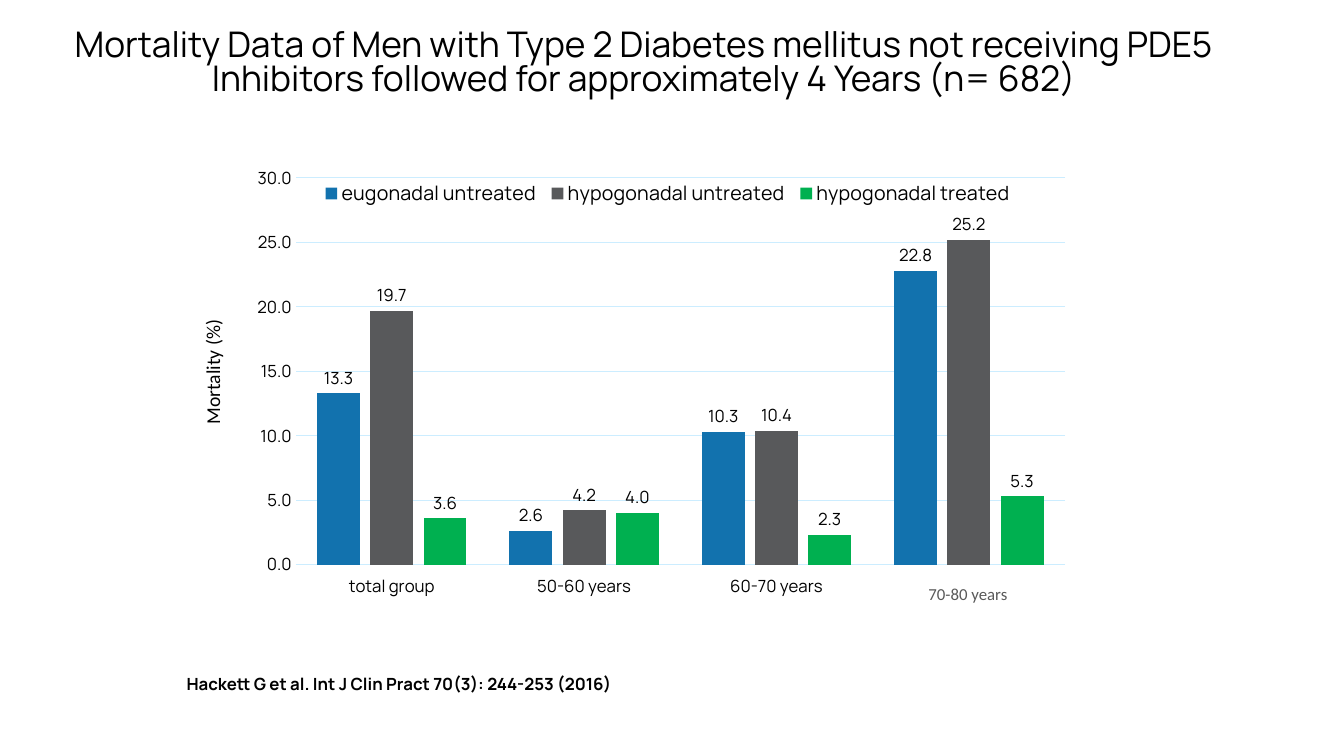
from dataclasses import dataclass

from lxml import etree
from pptx import Presentation
from pptx.chart.data import CategoryChartData
from pptx.dml.color import RGBColor
from pptx.enum.chart import (
    XL_CHART_TYPE,
    XL_LABEL_POSITION,
    XL_LEGEND_POSITION,
    XL_TICK_LABEL_POSITION,
    XL_TICK_MARK,
)
from pptx.enum.text import MSO_ANCHOR, MSO_AUTO_SIZE, PP_ALIGN
from pptx.oxml.ns import qn
from pptx.util import Inches, Pt

COLUMNS = XL_CHART_TYPE.COLUMN_CLUSTERED
ABOVE_BAR = XL_LABEL_POSITION.OUTSIDE_END
BOTTOM = XL_LEGEND_POSITION.BOTTOM
LOW = XL_TICK_LABEL_POSITION.LOW
NO_TICK = XL_TICK_MARK.NONE
MIDDLE = MSO_ANCHOR.MIDDLE
GROW = MSO_AUTO_SIZE.SHAPE_TO_FIT_TEXT
NO_FIT = MSO_AUTO_SIZE.NONE
CENTER = PP_ALIGN.CENTER
LEFT = PP_ALIGN.LEFT

WIDTH, HEIGHT = Inches(13.33), Inches(7.5)
MAIN_FONT, SIDE_FONT = "Manrope", "Calibri"
BLACK, GRID_BLUE = "000000", "CCEDFF"
ONE_DECIMAL = "0.0"
AGE_GROUPS = ("total group", "50-60 years", "60-70 years", "")


@dataclass(frozen=True)
class Area:
    left: float
    top: float
    width: float
    height: float

    def on_slide(self) -> tuple[int, int, int, int]:
        return (
            round(WIDTH * self.left / 100),
            round(HEIGHT * self.top / 100),
            round(WIDTH * self.width / 100),
            round(HEIGHT * self.height / 100),
        )


@dataclass(frozen=True)
class Cohort:
    name: str
    mortality: tuple[float, ...]
    color: str


@dataclass(frozen=True)
class Caption:
    text: str
    area: Area
    size: float = 12
    font: str = MAIN_FONT
    color: str = BLACK
    bold: bool = False
    align: PP_ALIGN = CENTER
    wrap: bool = False
    rotation: float = 0


COHORTS = (
    Cohort("eugonadal untreated", (13.3, 2.6, 10.3, 22.8), "1272AE"),
    Cohort("hypogonadal untreated", (19.7, 4.2, 10.4, 25.2), "58595B"),
    Cohort("hypogonadal treated", (3.6, 4.0, 2.3, 5.3), "00B050"),
)

CAPTIONS = (
    Caption("70-80 years", Area(68.27, 76.53, 7.5, 4), font=SIDE_FONT, color="595959"),
    Caption(
        "Hackett G et al. Int J Clin Pract 70(3): 244-253 (2016)",
        Area(12.75, 88.4, 33.91, 4),
        bold=True,
    ),
    Caption(
        "Mortality (%)",
        Area(10.58, 45.87, 10.5, 4.53),
        size=14,
        font=SIDE_FONT,
        align=LEFT,
        wrap=True,
        rotation=270,
    ),
)


def rgb(color: str) -> RGBColor:
    return RGBColor.from_string(color)


def style_font(font, size: float, name: str = MAIN_FONT, color: str = BLACK, bold: bool = False) -> None:
    font.size = Pt(size)
    font.name = name
    font.bold = bold
    font.color.rgb = rgb(color)


def write_text(frame, text: str, *, size: float, font: str = MAIN_FONT, color: str = BLACK,
               bold: bool = False, align: PP_ALIGN = CENTER, spacing: float = 1.0) -> None:
    paragraph = frame.paragraphs[0]
    paragraph.alignment = align
    paragraph.line_spacing = spacing
    run = paragraph.add_run()
    run.text = text
    style_font(run.font, size, font, color, bold)


def add_caption(slide, caption: Caption) -> None:
    box = slide.shapes.add_textbox(*caption.area.on_slide())
    box.rotation = caption.rotation
    frame = box.text_frame
    frame.word_wrap = caption.wrap
    frame.auto_size = GROW
    write_text(frame, caption.text, size=caption.size, font=caption.font,
               color=caption.color, bold=caption.bold, align=caption.align)


def place_in_chart(parent, index: int, area: Area, inner: bool = False) -> None:
    for old in parent.findall(qn("c:layout")):
        parent.remove(old)
    layout = etree.Element(qn("c:layout"))
    manual = etree.SubElement(layout, qn("c:manualLayout"))
    settings = [("layoutTarget", "inner")] if inner else []
    settings += [("xMode", "edge"), ("yMode", "edge")]
    settings += [("x", area.left / 100), ("y", area.top / 100),
                 ("w", area.width / 100), ("h", area.height / 100)]
    for tag, setting in settings:
        etree.SubElement(manual, qn(f"c:{tag}")).set("val", str(setting))
    parent.insert(index, layout)


def style_axes(chart) -> None:
    ages, mortality = chart.category_axis, chart.value_axis
    for axis in (ages, mortality):
        axis.major_tick_mark = NO_TICK
        axis.minor_tick_mark = NO_TICK
        style_font(axis.tick_labels.font, 12)
    ages.tick_label_position = LOW
    ages.format.line.color.rgb = rgb(GRID_BLUE)
    ages.format.line.width = Pt(1)
    mortality.minimum_scale, mortality.maximum_scale = 0, 30
    mortality.major_unit = 5
    mortality.format.line.fill.background()
    mortality.tick_labels.number_format = ONE_DECIMAL
    mortality.tick_labels.number_format_is_linked = False
    gridline = mortality.major_gridlines.format.line
    gridline.color.rgb = rgb(GRID_BLUE)
    gridline.width = Pt(0.75)


def add_mortality_chart(slide) -> None:
    figures = CategoryChartData(number_format=ONE_DECIMAL)
    figures.categories = AGE_GROUPS
    for cohort in COHORTS:
        figures.add_series(cohort.name, cohort.mortality)
    area = Area(17.93, 20.8, 62.57, 65.33)
    chart = slide.shapes.add_chart(COLUMNS, *area.on_slide(), figures).chart
    chart.has_title = False
    style_font(chart.font, 10, color="006EAB")
    style_axes(chart)

    plot = chart.plots[0]
    plot.vary_by_categories = False
    plot.gap_width, plot.overlap = 100, -24
    for series, cohort in zip(plot.series, COHORTS):
        series.format.fill.solid()
        series.format.fill.fore_color.rgb = rgb(cohort.color)
        labels = series.data_labels
        labels.show_value = True
        labels.position = ABOVE_BAR
        labels.number_format = ONE_DECIMAL
        labels.number_format_is_linked = False
        style_font(labels.font, 12)

    chart.has_legend = True
    legend = chart.legend
    legend.position = BOTTOM
    legend.include_in_layout = False
    style_font(legend.font, 14)
    legend_xml = chart.element.find(f".//{qn('c:legend')}")
    plot_xml = chart.element.find(f".//{qn('c:plotArea')}")
    place_in_chart(legend_xml, 1, Area(9, 4.6, 83.5, 5.4))
    place_in_chart(plot_xml, 0, Area(6.5, 4.2, 91.5, 78.3), inner=True)


def main() -> None:
    deck = Presentation()
    deck.slide_width, deck.slide_height = WIDTH, HEIGHT
    slide = deck.slides.add_slide(deck.slide_layouts[5])
    title = slide.shapes.title
    title.left, title.top, title.width, title.height = Area(1.58, 0.67, 92.65, 15.73).on_slide()
    title.text_frame.vertical_anchor = MIDDLE
    title.text_frame.auto_size = NO_FIT
    write_text(
        title.text_frame,
        "Mortality Data of Men with Type 2 Diabetes mellitus not receiving PDE5 "
        "Inhibitors followed for approximately 4 Years (n= 682)",
        size=25.2,
        spacing=0.79,
    )
    add_mortality_chart(slide)
    for caption in CAPTIONS:
        add_caption(slide, caption)
    deck.save("out.pptx")


if __name__ == "__main__":
    main()
